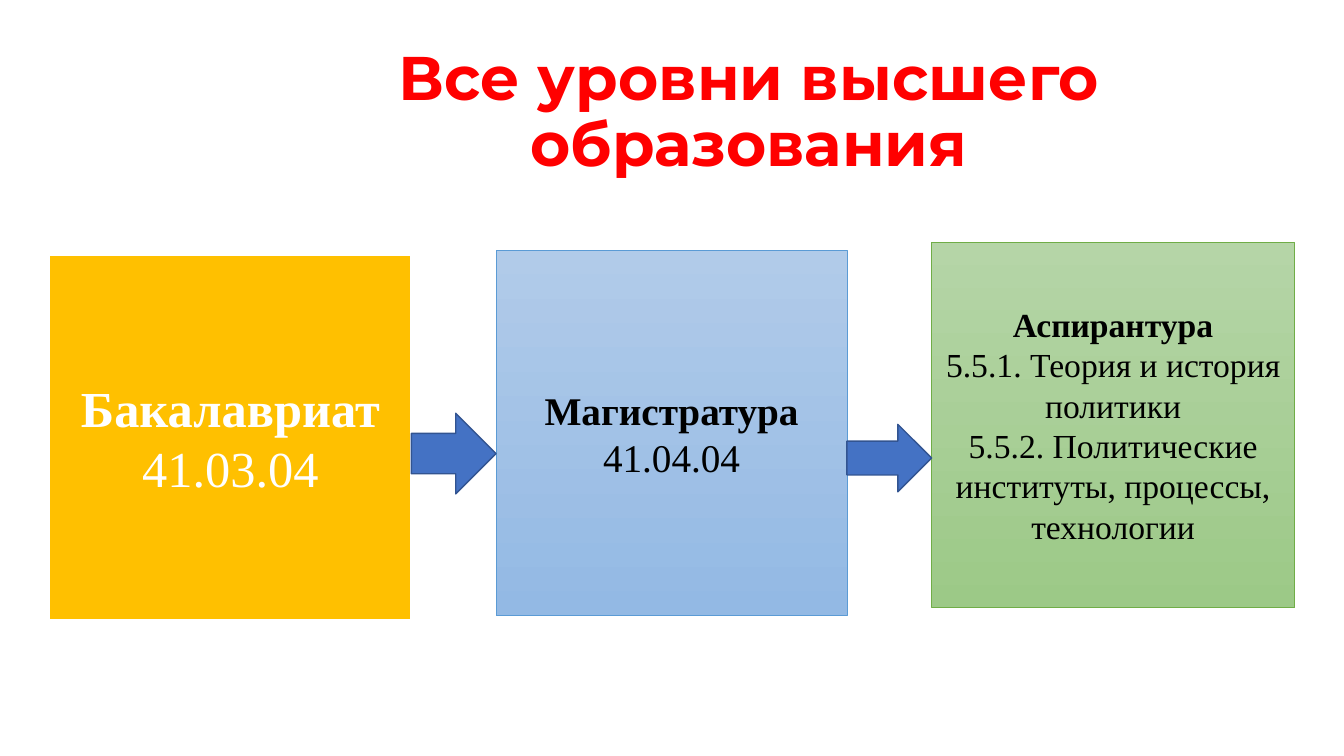
from dataclasses import dataclass

from pptx import Presentation
from pptx.dml.color import RGBColor
from pptx.enum.shapes import MSO_SHAPE
from pptx.enum.text import MSO_ANCHOR, PP_ALIGN
from pptx.util import Inches, Pt


@dataclass(frozen=True)
class Theme:
    title_font: str = "Montserrat"
    body_font: str = "Times New Roman"
    title_size: int = 44
    title_color: str = "FF0000"
    arrow_fill: str = "4472C4"
    arrow_line: str = "325491"


@dataclass(frozen=True)
class Level:
    name: str
    programmes: tuple
    box: tuple
    fill: tuple
    line: str
    line_width: float
    text_color: str
    text_size: int


THEME = Theme()
LEVELS = (
    Level("Бакалавриат", ("41.03.04",), (0.49, 2.53, 3.59, 3.62),
          ("FFC000",), "FFFFFF", 1.5, "FFFFFF", 36),
    Level("Магистратура", ("41.04.04",), (4.92, 2.48, 3.48, 3.63),
          ("B1CBE9", "93B9E4"), "5B9BD5", 0.5, "000000", 28),
    Level("Аспирантура",
          ("5.5.1. Теория и история политики",
           "5.5.2. Политические институты, процессы, технологии"),
          (9.24, 2.4, 3.6, 3.63),
          ("B5D5A7", "9CC987"), "70AD47", 0.5, "000000", 24),
)
ARROW_SPANS = ((4.1, 0.8), (4.21, 0.67))  # top and height


def write_lines(frame, lines, font, size, color, line_spacing=None):
    """Write centred paragraphs, the first one bold."""
    frame.word_wrap = True
    frame.vertical_anchor = MSO_ANCHOR.MIDDLE
    for index, line in enumerate(lines):
        paragraph = frame.paragraphs[0] if index == 0 else frame.add_paragraph()
        paragraph.alignment = PP_ALIGN.CENTER
        paragraph.line_spacing = line_spacing
        run = paragraph.add_run()
        run.text = line
        formats = {"name": font, "size": Pt(size), "bold": index == 0}
        for attribute, value in formats.items():
            setattr(run.font, attribute, value)
        run.font.color.rgb = RGBColor.from_string(color)


def add_block(slide, preset, box, fill, line, line_width):
    """Add a shape; two fill colours make a gradient from top to bottom."""
    block = slide.shapes.add_shape(preset, *map(Inches, box))
    block.shadow.inherit = False
    if len(fill) == 1:
        block.fill.solid()
        block.fill.fore_color.rgb = RGBColor.from_string(fill[0])
    else:
        block.fill.gradient()
        block.fill.gradient_angle = 270
        for stop, color in zip(block.fill.gradient_stops, fill):
            stop.color.rgb = RGBColor.from_string(color)
    block.line.color.rgb = RGBColor.from_string(line)
    block.line.width = Pt(line_width)
    return block


def add_title(slide, box, title):
    heading = slide.shapes.add_textbox(*map(Inches, box))
    write_lines(heading.text_frame, [title], THEME.title_font,
                THEME.title_size, THEME.title_color, line_spacing=0.9)


def add_level(slide, level):
    block = add_block(slide, MSO_SHAPE.RECTANGLE, level.box, level.fill,
                      level.line, level.line_width)
    write_lines(block.text_frame, (level.name, *level.programmes),
                THEME.body_font, level.text_size, level.text_color)


def add_step_arrow(slide, source, target, span):
    """Fill the gap between two neighbouring levels with an arrow."""
    left = source.box[0] + source.box[2]
    top, height = span
    add_block(slide, MSO_SHAPE.RIGHT_ARROW,
              (left, top, target.box[0] - left, height),
              (THEME.arrow_fill,), THEME.arrow_line, 1)


def main():
    deck = Presentation()
    deck.slide_width, deck.slide_height = Inches(13.33), Inches(7.5)
    slide = deck.slides.add_slide(deck.slide_layouts[6])
    add_title(slide, (2.45, 0.4, 9.96, 1.45), "Все уровни высшего образования")
    for level in LEVELS:
        add_level(slide, level)
    for source, target, span in zip(LEVELS, LEVELS[1:], ARROW_SPANS):
        add_step_arrow(slide, source, target, span)
    deck.save("out.pptx")


if __name__ == "__main__":
    main()
